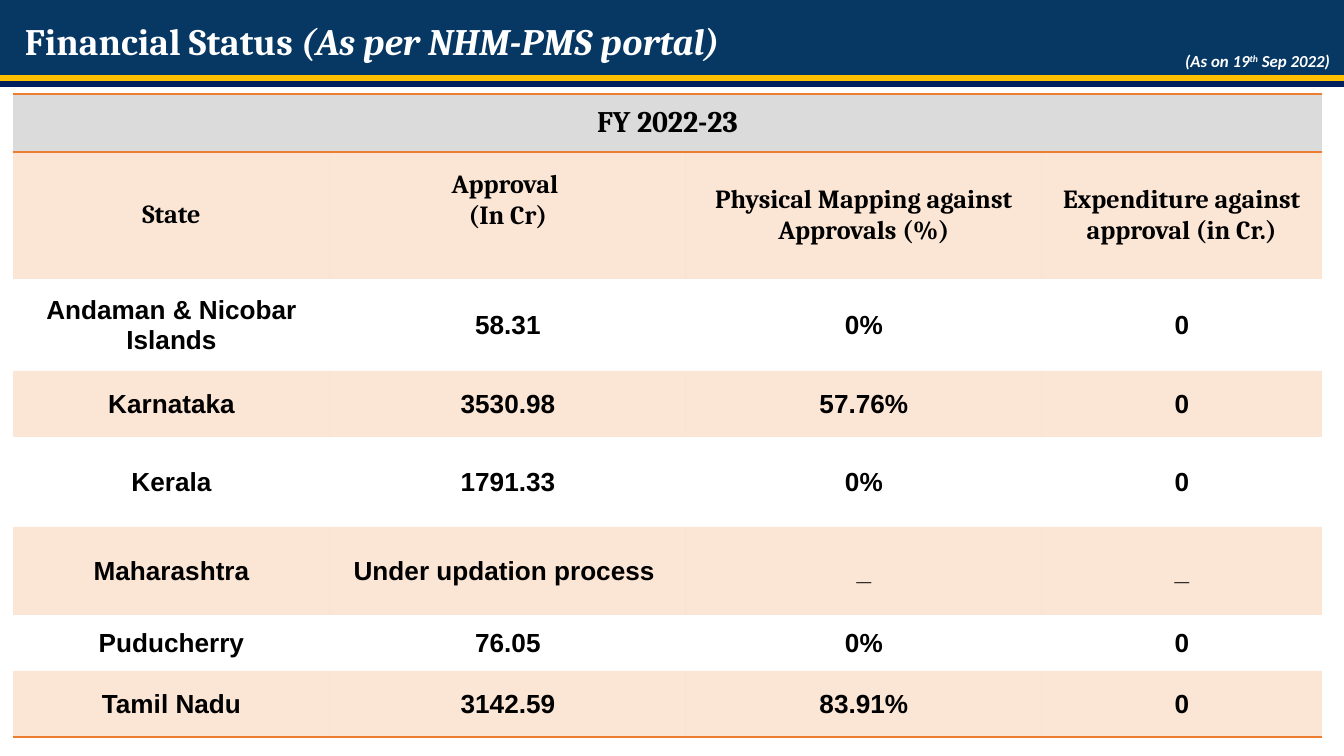
from lxml.etree import SubElement
from pptx import Presentation
from pptx.dml.color import RGBColor
from pptx.enum.shapes import MSO_CONNECTOR, MSO_SHAPE
from pptx.enum.text import MSO_ANCHOR, MSO_AUTO_SIZE, PP_ALIGN
from pptx.oxml import parse_xml
from pptx.oxml.ns import nsdecls, qn
from pptx.util import Emu, Pt

EMU_PER_PX = 914400 / 134.4
WIDTH, HEIGHT = 1344, 756
NAVY, DARK_BLUE, GOLD = "073763", "002060", "FFC000"
ORANGE, GREY, WHITE, BLACK = "ED7D31", "DBDBDB", "FFFFFF", "000000"
PLAIN_TABLE = "{2D5ABB26-0587-4C30-8999-92F81FD0307C}"

COLUMN_WIDTHS = [317, 356, 356, 280]
ROW_HEIGHTS = [58, 127, 92, 66, 90, 88, 56, 66]
HEADINGS = [
    "State",
    "Approval \n(In Cr)",
    "Physical Mapping against Approvals (%)",
    "Expenditure against approval (in Cr.)",
]
STATES = [
    ["Andaman & Nicobar Islands", "58.31", "0%", "0"],
    ["Karnataka", "3530.98", "57.76%", "0"],
    ["Kerala", "1791.33", "0%", "0"],
    ["Maharashtra", "Under updation process ", "_", "_"],
    ["Puducherry", "76.05", "0%", "0"],
    ["Tamil Nadu", "3142.59", "83.91%", "0"],
]


def px(length):
    return Emu(round(length * EMU_PER_PX))


def color(hex_code):
    return RGBColor.from_string(hex_code)


def write(paragraph, text, font="Cambria", size=14, ink=BLACK, italic=False, raised=False):
    run = paragraph.add_run()
    run.text = text
    run.font.name = font
    run.font.size = Pt(size)
    run.font.bold = True
    run.font.italic = italic
    run.font.color.rgb = color(ink)
    if raised:
        run.font._element.set("baseline", "30000")


def set_margins(holder, left, top, right, bottom):
    holder.margin_left, holder.margin_top = px(left), px(top)
    holder.margin_right, holder.margin_bottom = px(right), px(bottom)


def add_rule(slide, y, ink, weight):
    rule = slide.shapes.add_connector(MSO_CONNECTOR.STRAIGHT, 0, px(y), px(WIDTH), px(y))
    rule.line.color.rgb = color(ink)
    rule.line.width = Pt(weight)
    SubElement(rule._element.spPr, qn("a:effectLst"))


def add_title(slide):
    banner = slide.shapes.add_shape(MSO_SHAPE.RECTANGLE, 0, 0, px(WIDTH), px(75))
    banner.shadow.inherit = False
    banner.fill.solid()
    banner.fill.fore_color.rgb = color(NAVY)
    banner.line.fill.background()
    frame = banner.text_frame
    frame.word_wrap = True
    frame.vertical_anchor = MSO_ANCHOR.MIDDLE
    set_margins(frame, 10, 5, 10, 5)
    title = frame.paragraphs[0]
    title.alignment = PP_ALIGN.JUSTIFY
    title.line_spacing = 1.15
    title._p.get_or_add_pPr().set("marL", str(px(15)))
    write(title, "Financial Status ", size=20, ink=WHITE)
    write(title, "(As per NHM-PMS portal)", size=20, ink=WHITE, italic=True)


def add_date(slide):
    frame = slide.shapes.add_textbox(px(1172), px(44), px(173), px(34)).text_frame
    frame.word_wrap = False
    frame.auto_size = MSO_AUTO_SIZE.SHAPE_TO_FIT_TEXT
    for text, raised in [("(As on 19", False), ("th", True), (" Sep 2022)", False)]:
        write(frame.paragraphs[0], text, font="Calibri", size=9, ink=WHITE, italic=True, raised=raised)


def fill_cell(cell, hex_code, opacity=100):
    cell.fill.solid()
    cell.fill.fore_color.rgb = color(hex_code)
    if opacity < 100:
        tint = cell._tc.tcPr.find(".//" + qn("a:srgbClr"))
        SubElement(tint, qn("a:alpha")).set("val", str(opacity * 1000))


def add_borders(cell, *sides):
    for position, side in enumerate(sides):
        border = parse_xml(
            f'<a:{side} {nsdecls("a")} w="{Pt(1)}"><a:solidFill>'
            f'<a:srgbClr val="{ORANGE}"/></a:solidFill></a:{side}>'
        )
        cell._tc.get_or_add_tcPr().insert(position, border)


def write_cell(cell, text, margins, **text_format):
    cell.vertical_anchor = MSO_ANCHOR.MIDDLE
    set_margins(cell, *margins)
    frame = cell.text_frame
    for index, line in enumerate(text.split("\n")):
        paragraph = frame.add_paragraph() if index else frame.paragraphs[0]
        paragraph.alignment = PP_ALIGN.CENTER
        write(paragraph, line, **text_format)


def add_status_table(slide):
    frame = slide.shapes.add_table(
        len(ROW_HEIGHTS), len(COLUMN_WIDTHS), px(13), px(94),
        px(sum(COLUMN_WIDTHS)), px(sum(ROW_HEIGHTS)),
    )
    table = frame.table
    table.first_row = table.horz_banding = False
    table._tbl.tblPr.find(qn("a:tableStyleId")).text = PLAIN_TABLE
    for column, width in zip(table.columns, COLUMN_WIDTHS):
        column.width = px(width)
    for row, height in zip(table.rows, ROW_HEIGHTS):
        row.height = px(height)

    year = table.cell(0, 0)
    year.merge(table.cell(0, len(COLUMN_WIDTHS) - 1))
    write_cell(year, "FY 2022-23", (13, 7, 13, 7), size=16)
    for cell in table.rows[0].cells:
        fill_cell(cell, GREY)
        add_borders(cell, "lnT", "lnB")

    for cell, heading in zip(table.rows[1].cells, HEADINGS):
        bottom = 37 if "\n" in heading else 7
        write_cell(cell, heading, (13, 7, 13, bottom))
        fill_cell(cell, ORANGE, opacity=20)

    for index, values in enumerate(STATES):
        for cell, value in zip(table.rows[index + 2].cells, values):
            write_cell(cell, value, (1, 1, 1, 0), font="Arial")
            if index % 2:
                fill_cell(cell, ORANGE, opacity=20)
            else:
                cell.fill.background()
            if index == len(STATES) - 1:
                add_borders(cell, "lnB")


def main():
    deck = Presentation()
    deck.slide_width, deck.slide_height = px(WIDTH), px(HEIGHT)
    slide = deck.slides.add_slide(deck.slide_layouts[6])
    add_rule(slide, 77, GOLD, 3)
    add_rule(slide, 84, DARK_BLUE, 3)
    add_title(slide)
    add_rule(slide, 79, GOLD, 2.25)
    add_status_table(slide)
    add_date(slide)
    deck.save("out.pptx")


if __name__ == "__main__":
    main()
